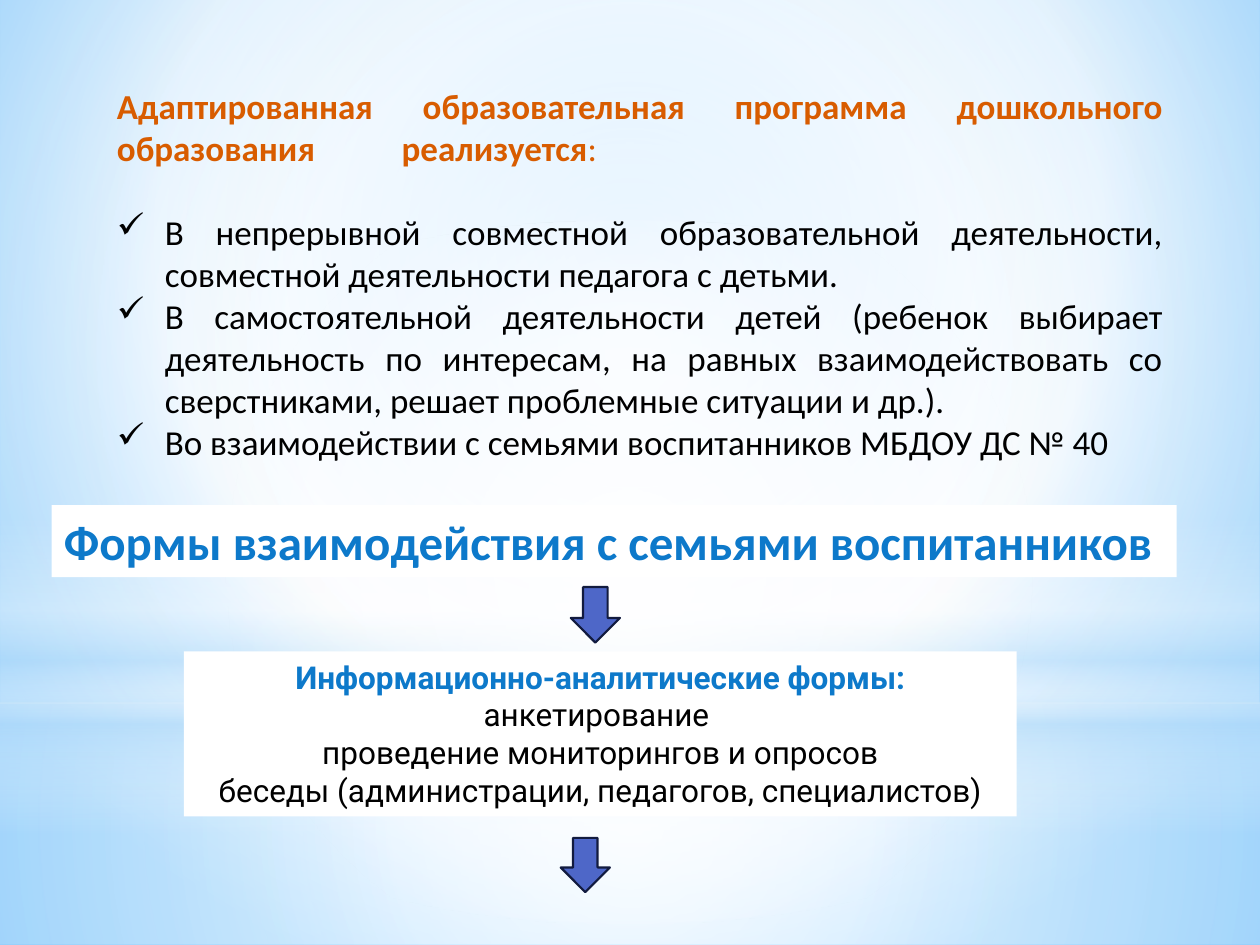
from lxml import etree
from pptx import Presentation
from pptx.dml.color import RGBColor
from pptx.enum.shapes import MSO_SHAPE
from pptx.enum.text import PP_ALIGN
from pptx.oxml.ns import qn
from pptx.util import Inches, Pt

RECTANGLE, ELLIPSE, DOWN_ARROW = MSO_SHAPE.RECTANGLE, MSO_SHAPE.OVAL, MSO_SHAPE.DOWN_ARROW
LEFT, CENTER, JUSTIFY = PP_ALIGN.LEFT, PP_ALIGN.CENTER, PP_ALIGN.JUSTIFY

THEME = {
    "orange": "D85C00", "blue": "0D79CA", "black": "000000", "white": "FFFFFF",
    "arrow": "4E67C8", "arrow_line": "121B3F", "arrow_line_width": 1.25,
    "sky": "9ED5FF", "deep_sky": "5BB9FF", "haze": "B4DCFA",
    "body": {"name": "Calibri", "size": Pt(20)},
    "title": {"name": "Calibri", "size": Pt(28)},
    "card": {"name": "Roboto", "size": Pt(18)},
}

# Gradient stops: position %, theme colour, opacity %.
# Focus: left, top, right, bottom insets in %; None means top to bottom.
MIDDLE = (50, 50, 50, 50)
BACKDROP = ([(0, "sky", 100), (60, "white", 100), (100, "deep_sky", 100)], (20, 10, 20, 60))

# Every box is left, top, width, height in % of the slide.
GLOWS = [
    (RECTANGLE, (0, 74.4, 100, 25.6),
     [(0, "white", 91), (37, "white", 76), (100, "haze", 79)], MIDDLE),
    (RECTANGLE, (0, 0, 100, 74.4),
     [(0, "white", 89), (48, "white", 62), (100, "haze", 79)], MIDDLE),
    (RECTANGLE, (0, 54.93, 100, 33.33),
     [(0, "white", 0), (29, "white", 30), (45, "haze", 40), (55, "white", 26),
      (65, "haze", 60), (100, "white", 0)], None),
    (ELLIPSE, (0, 23.33, 100, 74.4), [(0, "white", 100), (56, "white", 0)], MIDDLE),
]

# Paragraph: format, then runs of (text, colour, bold).
HEADING = {"alignment": JUSTIFY, "space_after": Pt(24)}
ITEM = {"alignment": JUSTIFY}
CENTERED = {"alignment": CENTER}
TEXTS = [
    {"box": (8.3, 8.27, 85, 41.73), "style": "body", "fill": None, "paragraphs": [
        (HEADING, [("Адаптированная образовательная программа дошкольного "
                    "образования\tреализуется", "orange", True), (":", "orange", False)]),
        (ITEM, [("В непрерывной совместной образовательной деятельности, "
                 "совместной деятельности педагога с детьми.", "black", False)]),
        (ITEM, [("В самостоятельной деятельности детей (ребенок выбирает деятельность "
                 "по интересам, на равных взаимодействовать со сверстниками, решает "
                 "проблемные ситуации и др.).", "black", False)]),
        (ITEM, [("Во взаимодействии с семьями воспитанников МБДОУ ДС № 40", "black", False)]),
    ]},
    {"box": (4.1, 53.47, 89.3, 7.6), "style": "title", "fill": "white", "paragraphs": [
        ({"alignment": LEFT}, [("Формы взаимодействия с семьями воспитанников", "blue", True)]),
    ]},
    {"box": (14.6, 68.93, 66.1, 17.47), "style": "card", "fill": "white", "paragraphs": [
        (CENTERED, [("Информационно-аналитические формы: ", "blue", True),
                    ("анкетирование ", "black", False)]),
        (CENTERED, [("проведение мониторингов и опросов", "black", False)]),
        (CENTERED, [("беседы (администрации, педагогов, специалистов)", "black", False)]),
    ]},
]
ARROWS = [(45.3, 62.13, 3.9, 5.87), (44.5, 88.67, 3.9, 5.73)]
BULLET, BULLET_INDENT, HEADING_TAB = "✓", Inches(0.38), Inches(2.26)

presentation = Presentation()
presentation.slide_width, presentation.slide_height = Inches(10), Inches(7.5)
slide = presentation.slides.add_slide(presentation.slide_layouts[6])


def color(name):
    return RGBColor.from_string(THEME[name])


def place(box):
    sides = (presentation.slide_width, presentation.slide_height) * 2
    return [round(share * side / 100) for share, side in zip(box, sides)]


def child(parent, tag, **attributes):
    values = {key: str(value) for key, value in attributes.items()}
    return etree.SubElement(parent, qn(tag), values)


def set_gradient(fill, properties, stops, focus):
    """Swap the solid fill inside properties for a gradient."""
    fill.solid()
    solid = properties.find(qn("a:solidFill"))
    gradient = etree.Element(qn("a:gradFill"), {"rotWithShape": "1"})
    stop_list = child(gradient, "a:gsLst")
    for position, name, opacity in stops:
        stop = child(stop_list, "a:gs", pos=position * 1000)
        stop_color = child(stop, "a:srgbClr", val=THEME[name])
        if opacity < 100:
            child(stop_color, "a:alpha", val=opacity * 1000)
    if focus:
        radial = child(gradient, "a:path", path="circle")
        child(radial, "a:fillToRect", **{side: inset * 1000 for side, inset in zip("ltrb", focus)})
    else:
        child(gradient, "a:lin", ang=90 * 60000, scaled=0)
    properties.replace(solid, gradient)


def add_shape(kind, box):
    shape = slide.shapes.add_shape(kind, *place(box))
    shape.shadow.inherit = False
    return shape


def add_text(box, style, fill, paragraphs):
    text_box = slide.shapes.add_textbox(*place(box))
    if fill:
        text_box.fill.solid()
        text_box.fill.fore_color.rgb = color(fill)
    frame = text_box.text_frame
    frame.word_wrap = True
    for index, (paragraph_format, runs) in enumerate(paragraphs):
        paragraph = frame.add_paragraph() if index else frame.paragraphs[0]
        for name, value in paragraph_format.items():
            setattr(paragraph, name, value)
        properties = paragraph._p.get_or_add_pPr()
        if paragraph_format is ITEM:
            properties.set("marL", str(BULLET_INDENT))
            properties.set("indent", str(-BULLET_INDENT))
            child(properties, "a:buChar", char=BULLET)
        elif paragraph_format is HEADING:
            child(child(properties, "a:tabLst"), "a:tab", pos=HEADING_TAB, algn="l")
        for text, color_name, bold in runs:
            run = paragraph.add_run()
            run.text = text
            for name, value in {**THEME[style], "bold": bold}.items():
                setattr(run.font, name, value)
            run.font.color.rgb = color(color_name)


background_fill = slide.background.fill
background_fill.solid()
set_gradient(background_fill, slide._element.find(".//" + qn("p:bgPr")), *BACKDROP)
for kind, box, stops, focus in GLOWS:
    glow = add_shape(kind, box)
    glow.line.fill.background()
    set_gradient(glow.fill, glow._element.spPr, stops, focus)
for text in TEXTS:
    add_text(**text)
for box in ARROWS:
    arrow = add_shape(DOWN_ARROW, box)
    arrow.fill.solid()
    arrow.fill.fore_color.rgb = color("arrow")
    arrow.line.color.rgb = color("arrow_line")
    arrow.line.width = Pt(THEME["arrow_line_width"])

presentation.save("out.pptx")
